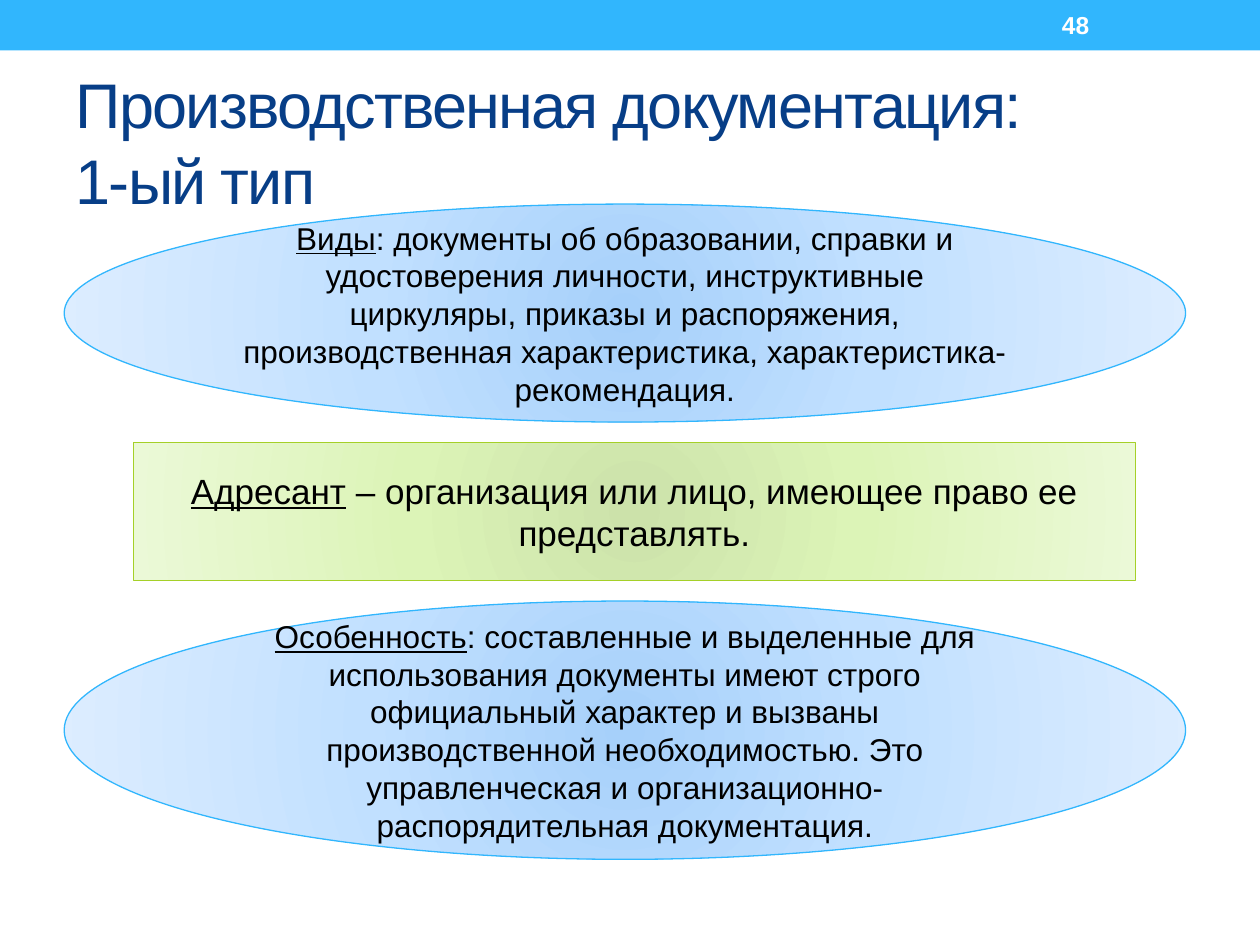
from lxml.etree import SubElement
from pptx import Presentation
from pptx.dml.color import RGBColor
from pptx.enum.shapes import MSO_SHAPE
from pptx.enum.text import MSO_ANCHOR, MSO_AUTO_SIZE, PP_ALIGN
from pptx.oxml.ns import qn
from pptx.util import Inches, Pt

COLORS = {"bar": "31B6FD", "title": "073E87", "text": "000000",
          "white": "FFFFFF", "green": "A5D028"}
BLUES = ["A6D0FA", "C1E0FF", "DDEDFF"]
GREENS = ["CCE2AA", "DCF4B7", "EBF9D7"]


class Deck:
    font = "Arial"

    def __init__(self, slide):
        self.slide = slide

    def color(self, name):
        return RGBColor.from_string(COLORS[name])

    def run(self, para, text, size, color, bold=False, under=False):
        run = para.add_run()
        run.text = text
        font = run.font
        font.name, font.size = self.font, Pt(size)
        font.bold, font.underline = bold, under
        font.color.rgb = self.color(color)
        return run

    def title(self, lines, box):
        shape = self.slide.shapes.title
        shape.left, shape.top, shape.width, shape.height = map(Inches, box)
        frame = shape.text_frame
        frame.auto_size = MSO_AUTO_SIZE.NONE
        frame.vertical_anchor = MSO_ANCHOR.MIDDLE
        para = frame.paragraphs[0]
        para.alignment = PP_ALIGN.LEFT
        for i, line in enumerate(lines):
            if i:
                para.add_line_break()
            run = self.run(para, line, 36, "title")
            run.font._element.set("spc", "-100")

    def shape(self, kind, box):
        shape = self.slide.shapes.add_shape(kind, *map(Inches, box))
        shape.shadow.inherit = False
        return shape

    def bar(self, box):
        shape = self.shape(MSO_SHAPE.RECTANGLE, box)
        shape.fill.solid()
        shape.fill.fore_color.rgb = self.color("bar")
        shape.line.fill.background()

    def glow(self, shape, tones):
        shape.fill.gradient()
        grad = shape._element.spPr.find(qn("a:gradFill"))
        for child in list(grad):
            grad.remove(child)
        stops = SubElement(grad, qn("a:gsLst"))
        for pos, tone in zip((0, 45, 100), tones):
            stop = SubElement(stops, qn("a:gs"), pos=str(pos * 1000))
            SubElement(stop, qn("a:srgbClr"), val=tone)
        ring = SubElement(grad, qn("a:path"), {"path": "circle"})
        SubElement(ring, qn("a:fillToRect"), dict.fromkeys("ltrb", "100000"))

    def card(self, kind, box, tones, line, size, head, body):
        shape = self.shape(kind, box)
        self.glow(shape, tones)
        shape.line.color.rgb = self.color(line)
        shape.line.width = Pt(0.75)
        frame = shape.text_frame
        frame.word_wrap = True
        frame.vertical_anchor = MSO_ANCHOR.MIDDLE
        para = frame.paragraphs[0]
        para.alignment = PP_ALIGN.CENTER
        self.run(para, head, size, "text", under=True)
        self.run(para, body, size, "text")

    def number(self, text, box):
        frame = self.slide.shapes.add_textbox(*map(Inches, box)).text_frame
        frame.word_wrap = True
        frame.vertical_anchor = MSO_ANCHOR.MIDDLE
        self.run(frame.paragraphs[0], text, 14, "white", bold=True)


def main():
    prs = Presentation()
    prs.slide_width, prs.slide_height = Inches(10), Inches(7.5)
    deck = Deck(prs.slides.add_slide(prs.slide_layouts[5]))
    deck.bar((0, 0, 10, 0.4))
    deck.title(["Производственная документация: ", "1-ый тип"],
               (0.5, 0.58, 9, 1.08))
    deck.card(MSO_SHAPE.OVAL, (0.51, 1.62, 8.9, 1.73), BLUES, "bar", 18, "Виды",
              ": документы об образовании, справки и удостоверения личности, "
              "инструктивные циркуляры, приказы и распоряжения, "
              "производственная характеристика, характеристика-рекомендация.")
    deck.card(MSO_SHAPE.RECTANGLE, (1.06, 3.51, 7.95, 1.1), GREENS, "green", 20,
              "Адресант",
              " – организация или лицо, имеющее право ее представлять.")
    deck.card(MSO_SHAPE.OVAL, (0.51, 4.77, 8.9, 2.05), BLUES, "bar", 18,
              "Особенность",
              ": составленные и выделенные для использования документы имеют "
              "строго официальный характер и вызваны производственной "
              "необходимостью. Это управленческая и "
              "организационно-распорядительная документация.")
    deck.number("48", (8.33, 0.02, 1.17, 0.36))
    prs.save("out.pptx")


if __name__ == "__main__":
    main()
